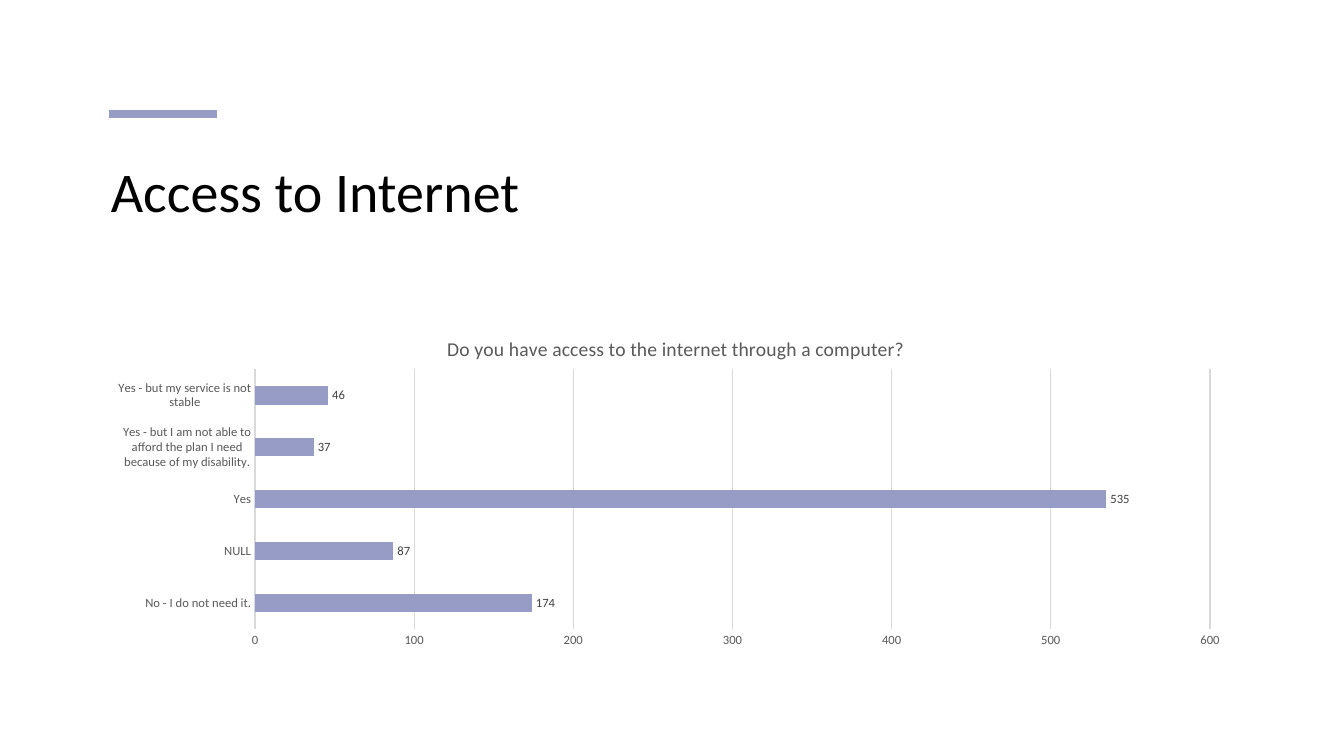
from lxml import etree
from pptx import Presentation
from pptx.chart.data import CategoryChartData
from pptx.dml.color import RGBColor
from pptx.enum.chart import XL_CHART_TYPE, XL_LABEL_POSITION, XL_TICK_MARK
from pptx.enum.shapes import MSO_CONNECTOR
from pptx.enum.text import MSO_ANCHOR, PP_ALIGN
from pptx.oxml import parse_xml
from pptx.oxml.ns import nsdecls, qn
from pptx.util import Pt

BAR_CLUSTERED = XL_CHART_TYPE.BAR_CLUSTERED
OUTSIDE_END = XL_LABEL_POSITION.OUTSIDE_END
NO_TICK = XL_TICK_MARK.NONE
STRAIGHT = MSO_CONNECTOR.STRAIGHT
TOP = MSO_ANCHOR.TOP
LEFT = PP_ALIGN.LEFT

LAVENDER = RGBColor(0x96, 0x9C, 0xC6)
BLACK = RGBColor(0x00, 0x00, 0x00)
LABEL_GREY = RGBColor(0x40, 0x40, 0x40)
AXIS_GREY = RGBColor(0x59, 0x59, 0x59)
GRID_GREY = RGBColor(0xD9, 0xD9, 0xD9)
FONT = "Calibri"
TITLE_ONLY = 5

ANSWERS = {
    "No - I do not need it.": 174,
    "NULL": 87,
    "Yes": 535,
    "Yes - but I am not able to afford the plan I need because of my disability.": 37,
    "Yes - but my service is not stable": 46,
}


def set_font(font, size, color):
    font.name = FONT
    font.size = Pt(size)
    font.bold = False
    font.color.rgb = color


def layout_xml(**values):
    """Manual chart layout, in fractions of the chart area."""
    target = '<c:layoutTarget val="inner"/>' if "w" in values else ""
    modes = "".join(f'<c:{k}Mode val="edge"/>' for k in ("x", "y"))
    sizes = "".join(f'<c:{k} val="{v}"/>' for k, v in values.items())
    return parse_xml(f'<c:layout {nsdecls("c")}><c:manualLayout>'
                     f"{target}{modes}{sizes}</c:manualLayout></c:layout>")


def add_heading(s, left, top, width, height):
    # Accent bar above the title
    bar_left, bar_y = left + 5.75, top - 26.75
    bar = s.shapes.add_connector(STRAIGHT, Pt(bar_left), Pt(bar_y),
                                 Pt(bar_left + 77), Pt(bar_y))
    bar.line.color.rgb = LAVENDER
    bar.line.width = Pt(6)
    etree.SubElement(bar._element.spPr, qn("a:effectLst"))

    # Title
    sp = s.shapes.title
    sp.left, sp.top, sp.width, sp.height = Pt(left), Pt(top), Pt(width), Pt(height)
    tf = sp.text_frame
    tf.text = "Access to Internet"
    tf.word_wrap = True
    tf.vertical_anchor = TOP
    p = tf.paragraphs[0]
    p.alignment = LEFT
    set_font(p.runs[0].font, 40, BLACK)


def add_answer_chart(s, left, top, width, height):
    data = CategoryChartData()
    data.categories = list(ANSWERS)
    data.add_series("Series 1", list(ANSWERS.values()))
    chart = s.shapes.add_chart(BAR_CLUSTERED, Pt(left), Pt(top),
                               Pt(width), Pt(height), data).chart
    set_font(chart.font, 10, BLACK)
    chart.has_legend = False

    # Chart title
    chart.has_title = True
    title = chart.chart_title
    tf = title.text_frame
    tf.text = "Do you have access to the internet through a computer?"
    set_font(tf.paragraphs[0].runs[0].font, 14, AXIS_GREY)
    title.include_in_layout = False
    title_xml = title._element
    for old in title_xml.findall(qn("c:layout")):
        title_xml.remove(old)
    title_xml.find(qn("c:tx")).addnext(layout_xml(x=0.3, y=0.05))

    # Plot area
    plot_xml = chart._chartSpace.chart.plotArea
    for old in plot_xml.findall(qn("c:layout")):
        plot_xml.remove(old)
    plot_xml.insert(0, layout_xml(x=0.135, y=0.16, w=0.836, h=0.763))

    # Axes
    for axis in (chart.category_axis, chart.value_axis):
        axis.major_tick_mark = axis.minor_tick_mark = NO_TICK
        set_font(axis.tick_labels.font, 9, AXIS_GREY)
    answers, counts = chart.category_axis, chart.value_axis
    counts.minimum_scale, counts.maximum_scale, counts.major_unit = 0, 600, 100
    counts.format.line.fill.background()
    counts.has_major_gridlines = True
    for line in (answers.format.line, counts.major_gridlines.format.line):
        line.color.rgb = GRID_GREY
        line.width = Pt(0.75)

    # Bars and value labels
    plot = chart.plots[0]
    plot.gap_width = 182
    plot.vary_by_categories = False
    series = plot.series[0]
    series.format.fill.solid()
    series.format.fill.fore_color.rgb = LAVENDER
    labels = series.data_labels
    labels.show_value = True
    labels.position = OUTSIDE_END
    set_font(labels.font, 9, LABEL_GREY)


def main():
    prs = Presentation()
    prs.slide_width, prs.slide_height = Pt(960), Pt(540)
    s = prs.slides.add_slide(prs.slide_layouts[TITLE_ONLY])
    add_heading(s, 72, 108, 816, 104)
    add_answer_chart(s, 72, 225, 816, 243)
    prs.save("out.pptx")


if __name__ == "__main__":
    main()
